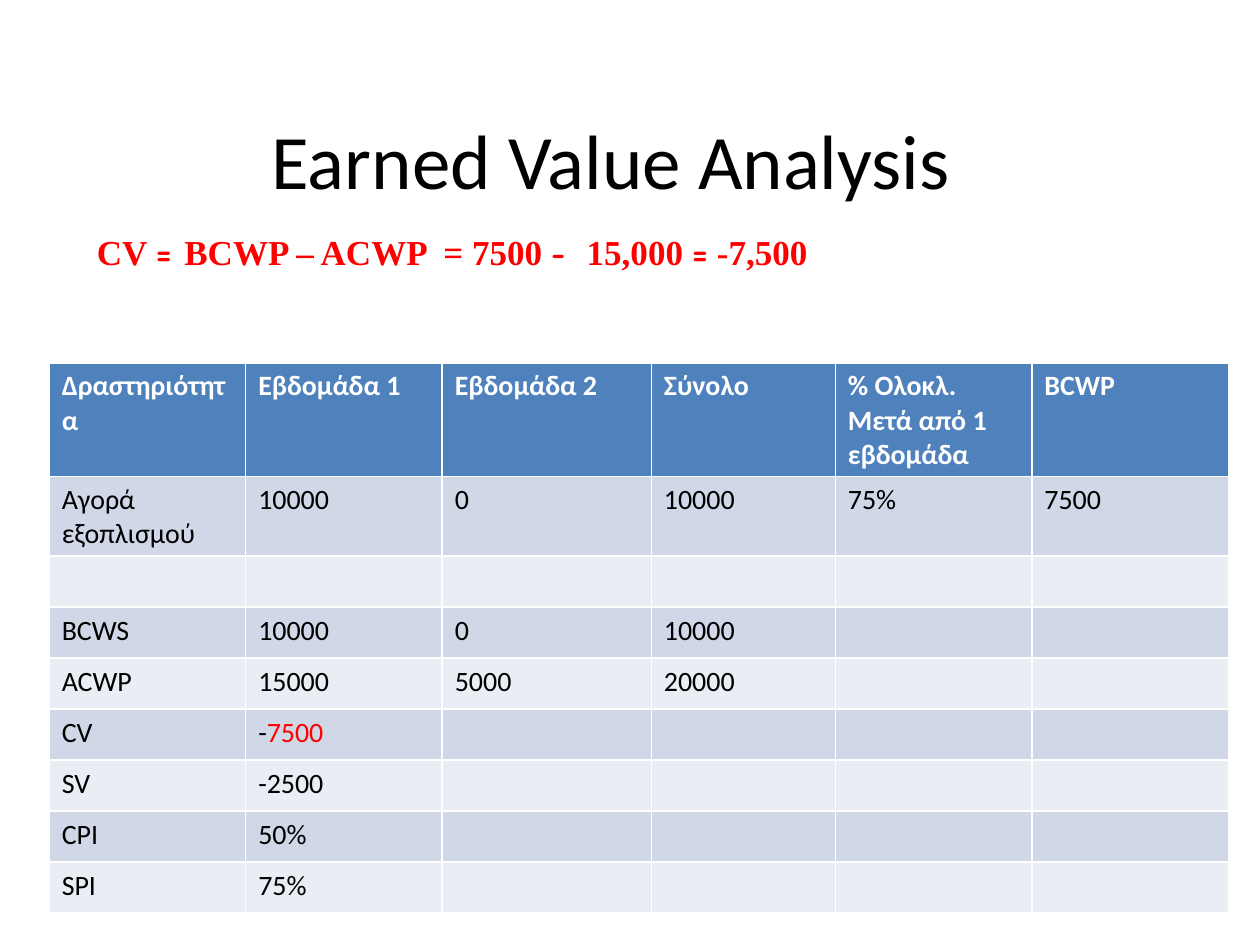
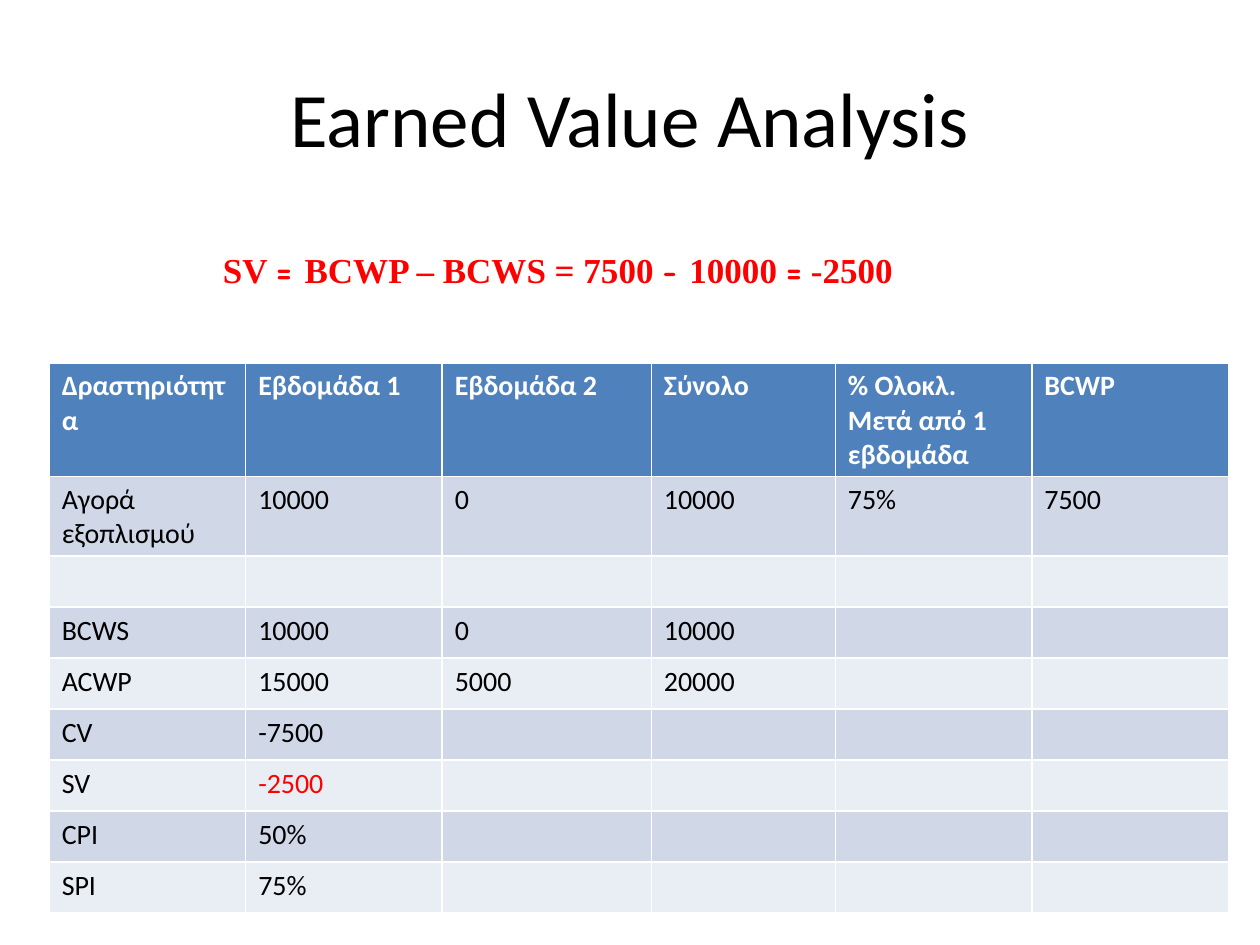
"""Builds two earned value analysis slides: cost variance and schedule variance."""
from dataclasses import dataclass
from itertools import cycle

from pptx import Presentation
from pptx import util as u
from pptx.dml.color import RGBColor
from pptx.enum import text


@dataclass(frozen=True)
class Theme:
    """Colours, fonts and type sizes shared by the slides."""
    ink: str = "000000"
    paper: str = "FFFFFF"
    accent: str = "FF0000"
    header: str = "4F81BD"
    bands: tuple = ("D0D8E8", "E9EDF4")
    body_font: str = "Calibri"
    formula_fonts: tuple = ("Times New Roman", "Comic Neue")
    title_size: int = 44
    formula_size: int = 20
    table_size: int = 16


class Deck:
    """Holds the theme and the current slide, measured on a 100 by 75 grid."""
    COLUMNS, ROWS = 100, 75

    def __init__(self, theme):
        """Start an empty presentation."""
        self.theme = theme
        self.presentation = Presentation()
        self.presentation.slide_width = u.Inches(10)
        self.presentation.slide_height = u.Inches(7.5)
        self.slide = None

    def across(self, columns):
        """Turn grid columns into a length."""
        return u.Emu(round(self.presentation.slide_width * columns / self.COLUMNS))

    def down(self, rows):
        """Turn grid rows into a length."""
        return u.Emu(round(self.presentation.slide_height * rows / self.ROWS))

    def box(self, left, top, width, height):
        """Turn a grid area into left, top, width and height."""
        return self.across(left), self.down(top), self.across(width), self.down(height)

    def run(self, paragraph, words, size, colour, font=None, bold=False):
        """Add one formatted run."""
        run = paragraph.add_run()
        run.text = words
        run.font.size = u.Pt(size)
        run.font.name = font or self.theme.body_font
        run.font.bold = bold
        run.font.color.rgb = RGBColor.from_string(colour)

    def title_slide(self, words, area):
        """Add a slide and place its title."""
        layout = self.presentation.slide_layouts[5]
        self.slide = self.presentation.slides.add_slide(layout)
        title = self.slide.shapes.title
        title.left, title.top, title.width, title.height = self.box(*area)
        title.text_frame.vertical_anchor = text.MSO_ANCHOR.MIDDLE
        paragraph = title.text_frame.paragraphs[0]
        paragraph.alignment = text.PP_ALIGN.CENTER
        self.run(paragraph, words, self.theme.title_size, self.theme.ink)

    def formula(self, pieces, area):
        """Add a one-line formula whose terms and operators alternate fonts."""
        frame = self.slide.shapes.add_textbox(*self.box(*area)).text_frame
        frame.word_wrap = False
        frame.auto_size = text.MSO_AUTO_SIZE.SHAPE_TO_FIT_TEXT
        for piece, font in zip(pieces, cycle(self.theme.formula_fonts)):
            self.run(frame.paragraphs[0], piece, self.theme.formula_size,
                     self.theme.accent, font, bold=True)

    def cell(self, cell, runs, fill, colour, bold):
        """Fill one table cell and write its runs."""
        cell.fill.solid()
        cell.fill.fore_color.rgb = RGBColor.from_string(fill)
        for words, highlighted in runs:
            self.run(cell.text_frame.paragraphs[0], words, self.theme.table_size,
                     self.theme.accent if highlighted else colour, bold=bold)

    def table(self, rows, widths, row_height, area, highlights):
        """Add a banded table; highlights maps (row, column) to its runs."""
        frame = self.slide.shapes.add_table(len(rows), len(widths), *self.box(*area))
        table = frame.table
        for column, width in zip(table.columns, widths):
            column.width = self.across(width)
        for row in table.rows:
            row.height = self.down(row_height)
        frame.height = self.down(area[3])
        for r, row in enumerate(rows):
            is_header = r == 0
            fill = self.theme.header if is_header else self.theme.bands[(r - 1) % 2]
            colour = self.theme.paper if is_header else self.theme.ink
            for c in range(len(widths)):
                words = row[c] if c < len(row) else ""
                runs = highlights.get((r, c), [(words, False)] if words else [])
                self.cell(table.cell(r, c), runs, fill, colour, is_header)


ACTIVITY_ROWS = [
    ["Δραστηριότητα", "Εβδομάδα 1", "Εβδομάδα 2", "Σύνολο",
     "% Ολοκλ. Μετά από 1 εβδομάδα", "BCWP"],
    ["Αγορά εξοπλισμού", "10000", "0", "10000", "75%", "7500"],
    [],
    ["BCWS", "10000", "0", "10000"],
    ["ACWP", "15000", "5000", "20000"],
    ["CV", "-7500"],
    ["SV", "-2500"],
    ["CPI", "50%"],
    ["SPI", "75%"],
]
COLUMN_WIDTHS = [15.6, 15.6, 16.6, 14.6, 15.6, 15.6]
ROW_HEIGHT = 4.05
TABLE_AREA = (3.9, 28.8, 93.4, 43.7)

VARIANCES = [
    {"title_area": (3.5, 7.6, 90, 10),
     "formula_area": (6.7, 17.8, 59.7, 4.4),
     "pieces": ["CV ", "= ", "BCWP – ACWP  = 7500 ", "- ", " 15,000 ", "=", " -7,500"],
     "highlights": {(5, 1): [("-", False), ("7500", True)]}},
    {"title_area": (5, 3, 90, 12.5),
     "formula_area": (16.7, 19.2, 56.4, 4.4),
     "pieces": ["SV ", "= ", "BCWP – BCWS = 7500 ", "- ", "10000 ", "=", " -2500"],
     "highlights": {(6, 1): [("-2500", True)]}},
]


def main():
    """Build and save both slides."""
    deck = Deck(Theme())
    for variance in VARIANCES:
        deck.title_slide("Earned Value Analysis", variance["title_area"])
        deck.formula(variance["pieces"], variance["formula_area"])
        deck.table(ACTIVITY_ROWS, COLUMN_WIDTHS, ROW_HEIGHT, TABLE_AREA,
                   variance["highlights"])
    deck.presentation.save("out.pptx")


if __name__ == "__main__":
    main()
